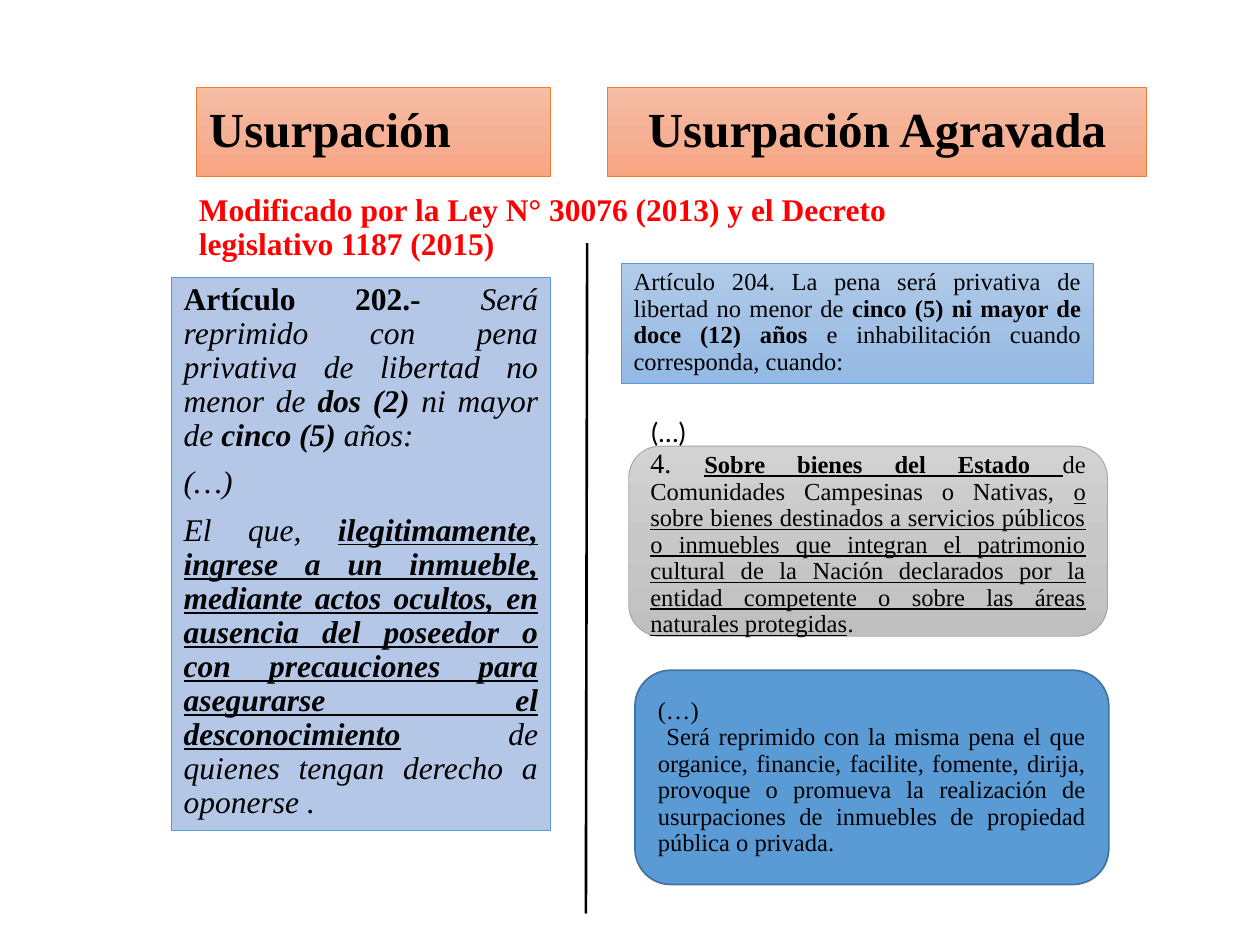
from copy import deepcopy

from lxml.etree import SubElement
from pptx import Presentation
from pptx.dml.color import RGBColor
from pptx.enum.shapes import MSO_CONNECTOR, MSO_SHAPE
from pptx.enum.text import MSO_ANCHOR, PP_ALIGN
from pptx.oxml.ns import qn
from pptx.util import Inches, Pt

SERIF = "Times New Roman"
ORANGE = ("F7BDA5", "F5B196", "F8A582")
BLUE = ("B1CBE9", "A3C1E5", "93B9E4")
GRAY = ("D2D2D2", "C8C8C8", "C0C0C0")


def color(hex_string):
    return RGBColor.from_string(hex_string)


class SlideBuilder:
    """Holds the text style and the current slide."""

    line_spacing = 0.9

    def __init__(self, slide):
        self.slide = slide

    def box(self, left, top, width, height, fill, line, line_width=0.5, rounded=False):
        """Draw a rectangle; three colours in fill make a vertical gradient."""
        kind = MSO_SHAPE.ROUNDED_RECTANGLE if rounded else MSO_SHAPE.RECTANGLE
        shape = self.slide.shapes.add_shape(
            kind, Inches(left), Inches(top), Inches(width), Inches(height))
        shape.shadow.inherit = False
        shape.line.color.rgb = color(line)
        shape.line.width = Pt(line_width)
        if isinstance(fill, str):
            shape.fill.solid()
            shape.fill.fore_color.rgb = color(fill)
        else:
            self.gradient(shape, fill)
        return shape

    def gradient(self, shape, colors):
        shape.fill.gradient()
        shape.fill.gradient_angle = 270
        stop_list = shape._element.spPr.find(".//" + qn("a:gsLst"))
        stop_list.insert(1, deepcopy(stop_list[0]))
        for index, (stop, hex_string) in enumerate(zip(shape.fill.gradient_stops, colors)):
            stop.position = index / 2
            stop.color.rgb = color(hex_string)

    def label(self, left, top, width, height):
        return self.slide.shapes.add_textbox(
            Inches(left), Inches(top), Inches(width), Inches(height))

    def add_text(self, shape, paragraphs, size, align=PP_ALIGN.JUSTIFY, anchor=MSO_ANCHOR.TOP,
                 font_color="000000", bold=None, italic=None, gap=0):
        """Each paragraph is a list of (text, marks): b is bold, r upright, u underlined."""
        frame = shape.text_frame
        frame.word_wrap = True
        frame.vertical_anchor = anchor
        for index, runs in enumerate(paragraphs):
            paragraph = frame.add_paragraph() if index else frame.paragraphs[0]
            paragraph.alignment = align
            paragraph.line_spacing = self.line_spacing
            paragraph.space_before = Pt(gap if index else 0)
            font = paragraph.font
            font.name, font.size = SERIF, Pt(size)
            font.bold, font.italic = bold, italic
            font.color.rgb = color(font_color)
            for text, marks in runs:
                run = paragraph.add_run()
                run.text = text
                if "b" in marks:
                    run.font.bold = True
                if "r" in marks:
                    run.font.italic = False
                if "u" in marks:
                    run.font.underline = True
        return frame

    def divider(self, start, end, width):
        connector = self.slide.shapes.add_connector(
            MSO_CONNECTOR.STRAIGHT, *map(Inches, start + end))
        connector.line.color.rgb = color("000000")
        connector.line.width = Pt(width)
        SubElement(connector._element.spPr, qn("a:effectLst"))


def main():
    presentation = Presentation()
    presentation.slide_width, presentation.slide_height = Inches(10), Inches(7.5)
    builder = SlideBuilder(presentation.slides.add_slide(presentation.slide_layouts[6]))

    # Shared penalty for organisers
    organisers = builder.box(5.04, 5.32, 3.76, 1.7, "5B9BD5", "43739E", 1, rounded=True)
    builder.add_text(organisers, [
        [("(…)", "")],
        [(" Será reprimido con la misma pena el que organice, financie, facilite, fomente, "
          "dirija, provoque o promueva la realización de usurpaciones de inmuebles de "
          "propiedad pública o privada.", "")],
    ], 14, anchor=MSO_ANCHOR.MIDDLE)

    # Column headings
    for text, left, width, align in (
            ("Usurpación", 1.56, 2.81, PP_ALIGN.LEFT),
            ("Usurpación Agravada", 4.82, 4.28, PP_ALIGN.CENTER)):
        heading = builder.box(left, 0.69, width, 0.71, ORANGE, "ED7D31")
        builder.add_text(heading, [[(text, "")]], 28, align, MSO_ANCHOR.MIDDLE, bold=True)

    # Article 202
    article_202 = builder.box(1.36, 2.2, 3.01, 4.39, "B4C7E7", "5B9BD5")
    builder.add_text(article_202, [
        [("Artículo 202.- ", "br"),
         ("Será reprimido con pena privativa de libertad no menor de ", ""),
         ("dos (2)", "b"), (" ni mayor de ", ""), ("cinco (5)", "b"), (" años:", "")],
        [("(…)", "")],
        [("El que, ", ""),
         ("ilegitimamente, ingrese a un inmueble, mediante actos ocultos, en ausencia del "
          "poseedor o con precauciones para asegurarse el desconocimiento", "bu"),
         (" de quienes tengan derecho a oponerse .", "")],
    ], 18, italic=True, gap=7.5)

    # Amending laws
    amendment = builder.label(1.48, 1.49, 6.07, 0.65)
    builder.add_text(amendment, [
        [("Modificado por la Ley N° 30076 (2013) y el Decreto legislativo 1187 (2015)", "")],
    ], 18, PP_ALIGN.LEFT, font_color="FF0000", bold=True)

    # Article 204
    article_204 = builder.box(4.93, 2.09, 3.75, 0.95, BLUE, "5B9BD5")
    builder.add_text(article_204, [
        [("Artículo 204. La pena será privativa de libertad no menor de ", ""),
         ("cinco (5) ni mayor de doce (12) años", "b"),
         (" e inhabilitación cuando corresponda, cuando:", "")],
    ], 14)

    # Aggravating circumstance 4
    state_property = builder.box(4.99, 3.54, 3.8, 1.51, GRAY, "A5A5A5", rounded=True)
    frame = builder.add_text(state_property, [
        [("(…)", "")],
        [("4. ", ""), ("Sobre bienes del Estado ", "bu"),
         ("de Comunidades Campesinas o Nativas, ", ""),
         ("o sobre bienes destinados a servicios públicos o inmuebles que integran el "
          "patrimonio cultural de la Nación declarados por la entidad competente o sobre "
          "las áreas naturales protegidas", "u"),
         (".", "")],
    ], 14, anchor=MSO_ANCHOR.MIDDLE)
    frame.margin_bottom = Inches(0.25)
    ellipsis, circumstance = frame.paragraphs
    ellipsis.font.name, ellipsis.font.size = "Calibri", Pt(16)
    circumstance.runs[0].font.size = Pt(16)

    # Divider between the columns
    builder.divider((4.66, 1.93), (4.65, 7.25), 1.5)

    presentation.save("out.pptx")


if __name__ == "__main__":
    main()
